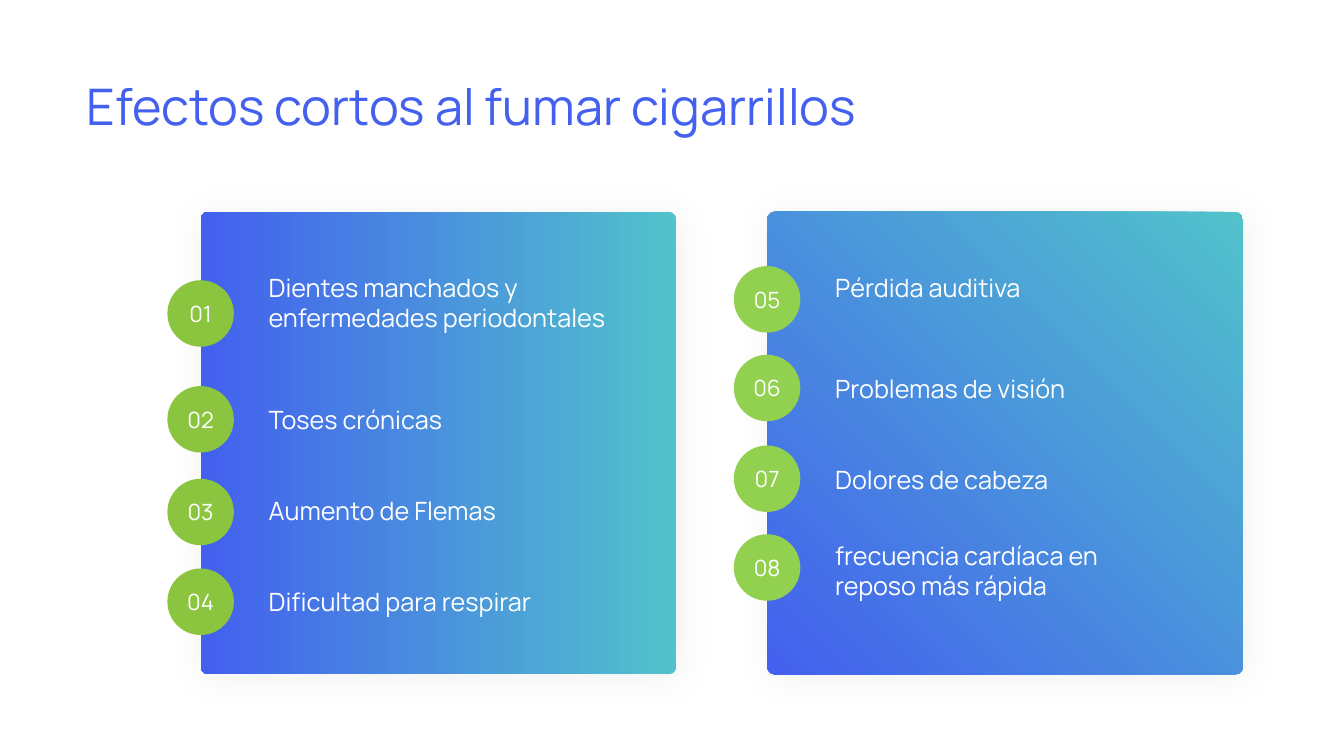
from lxml import etree
from pptx import Presentation
from pptx.dml.color import RGBColor
from pptx.enum.shapes import MSO_SHAPE
from pptx.enum.text import MSO_ANCHOR, PP_ALIGN
from pptx.oxml.ns import qn
from pptx.util import Inches, Pt

OVAL, ROUND = MSO_SHAPE.OVAL, MSO_SHAPE.ROUNDED_RECTANGLE
TOP, MIDDLE = MSO_ANCHOR.TOP, MSO_ANCHOR.MIDDLE
LEFT, CENTER = PP_ALIGN.LEFT, PP_ALIGN.CENTER

WIDE, HIGH = Inches(13.333), Inches(7.5)
FONT = "Manrope"
COLORS = {
    "blue": "4361EE",
    "teal": "51C2CB",
    "green": "8BC53F",
    "lime": "92D050",
    "white": "FFFFFF",
    "black": "000000",
}

# Shares of the slide, in percent of its width or height
PANEL_TOP, PANEL_WIDE, PANEL_HIGH = 28, 35.4, 61.2
DISC_WIDE, DISC_HIGH = 4.95, 8.8
TEXT_IN, TEXT_TOP, TEXT_HIGH = 4.32, 35.33, 47

# Each effect: top of its disc in percent, space before in points, wording
CARDS = [
    {"left": 14.93, "angle": 180, "disc": "green", "wide": 28.95, "first": 1,
     "effects": [
         (37.07, 0, "Dientes manchados y enfermedades periodontales"),
         (51.07, 51, "Toses crónicas"),
         (63.33, 43.5, "Aumento de Flemas"),
         (75.2, 43.5, "Dificultad para respirar")]},
    {"left": 57.08, "angle": 225, "disc": "lime", "wide": 26.63, "first": 5,
     "effects": [
         (35.2, 0, "Pérdida auditiva"),
         (46.93, 51, "Problemas de visión"),
         (58.93, 43.5, "Dolores de cabeza"),
         (70.67, 32, "frecuencia cardíaca en reposo más rápida")]},
]


def color(name):
    return RGBColor.from_string(COLORS[name])


def area(left, top, wide, high):
    """Turn percent shares of the slide into lengths."""
    return (int(WIDE * left / 100), int(HIGH * top / 100),
            int(WIDE * wide / 100), int(HIGH * high / 100))


def write(para, text, size, tint, align=LEFT):
    para.alignment = align
    run = para.add_run()
    run.text = text
    run.font.name = FONT
    run.font.size = Pt(size)
    run.font.color.rgb = color(tint)


def add_title(slide, text):
    title = slide.shapes.title
    title.left, title.top, title.width, title.height = area(5.7, 9.33, 82.35, 9.47)
    frame = title.text_frame
    frame.word_wrap = True
    frame.vertical_anchor = TOP
    para = frame.paragraphs[0]
    para.line_spacing = 1.0
    para.space_before = Pt(0)
    write(para, text, 36, "blue")


def add_form(slide, kind, box):
    form = slide.shapes.add_shape(kind, *box)
    form.shadow.inherit = False
    form.line.fill.background()
    return form


def add_glow(form):
    """Give the shape a soft, faint shadow."""
    effects = form._element.spPr.find(qn("a:effectLst"))
    shade = etree.SubElement(
        effects, qn("a:outerShdw"), blurRad=str(Pt(27)), dist=str(Pt(3)),
        dir=str(45 * 60000), algn="tl", rotWithShape="0")
    tint = etree.SubElement(shade, qn("a:srgbClr"), val=COLORS["black"])
    etree.SubElement(tint, qn("a:alpha"), val="6000")


def add_panel(slide, left, angle):
    panel = add_form(slide, ROUND, area(left, PANEL_TOP, PANEL_WIDE, PANEL_HIGH))
    panel.adjustments[0] = 0.017
    panel.fill.gradient()
    panel.fill.gradient_angle = angle
    stops = zip(panel.fill.gradient_stops, (0, 0.99), ("teal", "blue"))
    for stop, place, tint in stops:
        stop.position = place
        stop.color.rgb = color(tint)
    add_glow(panel)


def add_disc(slide, left, top, tint, number):
    disc = add_form(slide, OVAL, area(left, top, DISC_WIDE, DISC_HIGH))
    disc.fill.solid()
    disc.fill.fore_color.rgb = color(tint)
    frame = disc.text_frame
    frame.margin_left = frame.margin_right = 0
    frame.margin_top = frame.margin_bottom = 0
    frame.vertical_anchor = MIDDLE
    write(frame.paragraphs[0], f"{number:02}", 16, "white", CENTER)


def add_list(slide, left, wide, effects):
    box = slide.shapes.add_textbox(*area(left, TEXT_TOP, wide, TEXT_HIGH))
    frame = box.text_frame
    frame.word_wrap = True
    for index, (_, gap, text) in enumerate(effects):
        para = frame.add_paragraph() if index else frame.paragraphs[0]
        para.space_before = Pt(gap)
        write(para, text, 18, "white")


def add_card(slide, card):
    left, effects = card["left"], card["effects"]
    add_panel(slide, left, card["angle"])
    add_list(slide, left + TEXT_IN, card["wide"], effects)
    for number, (top, _, _) in enumerate(effects, card["first"]):
        add_disc(slide, left - DISC_WIDE / 2, top, card["disc"], number)


def main():
    deck = Presentation()
    deck.slide_width, deck.slide_height = WIDE, HIGH
    slide = deck.slides.add_slide(deck.slide_layouts[5])
    add_title(slide, "Efectos cortos al fumar cigarrillos")
    for card in CARDS:
        add_card(slide, card)
    deck.save("out.pptx")


if __name__ == "__main__":
    main()
